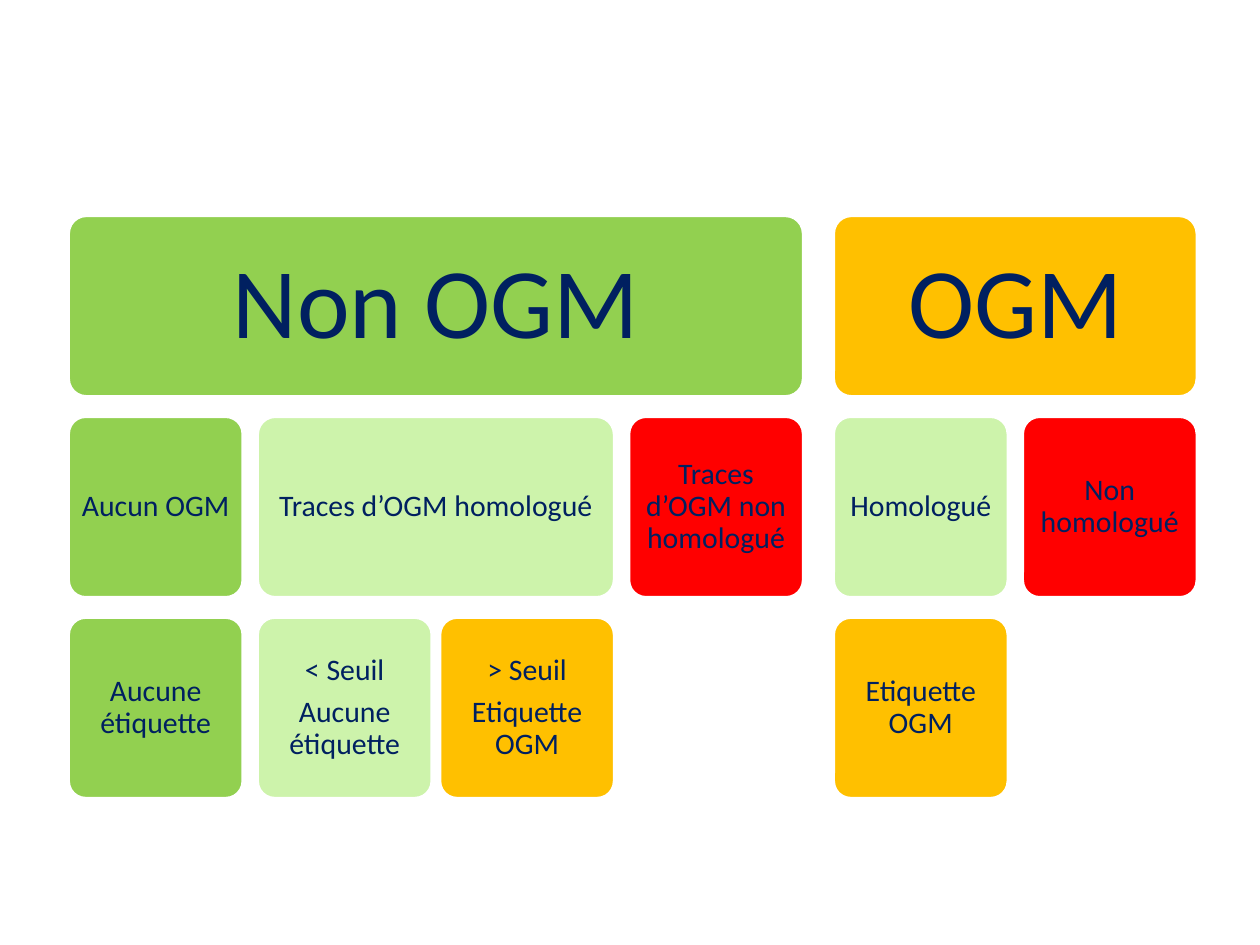
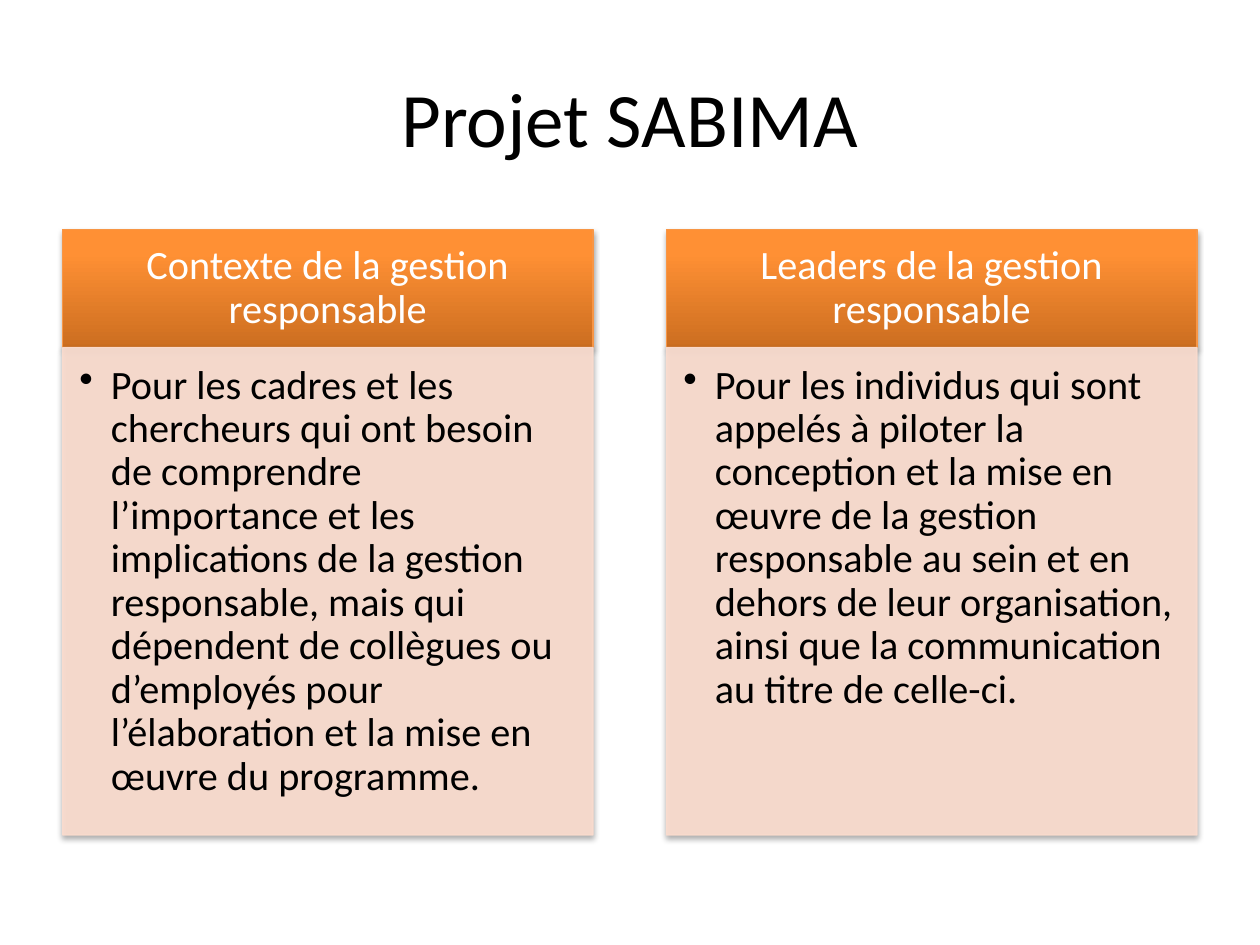
from collections import namedtuple
from dataclasses import dataclass

from lxml.etree import SubElement
from pptx import Presentation
from pptx.dml.color import RGBColor
from pptx.enum.shapes import MSO_SHAPE
from pptx.enum.text import MSO_ANCHOR, PP_ALIGN
from pptx.oxml.ns import qn
from pptx.util import Pt


@dataclass(frozen=True)
class Theme:
    font: str = "Calibri"
    white: str = "FFFFFF"
    black: str = "000000"
    navy: str = "002060"
    green: str = "92D050"
    pale_green: str = "CDF3AB"
    amber: str = "FFC000"
    red: str = "FF0000"
    orange: str = "F79646"
    peach: str = "FCDDCF"
    bar_stops: tuple = ((0, "CC6E20"), (80, "FF9034"), (100, "FF9136"))
    title_size: float = 44
    root_size: float = 57
    node_size: float = 17
    column_size: float = 23


T = Theme()
Box = namedtuple("Box", "x y w h")
Node = namedtuple("Node", "text color children", defaults=((),))

# Classification tree: leaf width, row height and the gap between siblings by depth
LEAF_W, ROW_H, ROW_STEP = 100, 103.7, 114.8
SIBLING_GAPS = (17, 8, 4.2)

CLASSES = (
    Node("Non OGM", T.green, (
        Node("Aucun OGM", T.green, (Node("Aucune étiquette", T.green),)),
        Node("Traces d’OGM homologué", T.pale_green, (
            Node("< Seuil\nAucune étiquette", T.pale_green),
            Node("> Seuil\nEtiquette OGM", T.amber),
        )),
        Node("Traces d’OGM non homologué", T.red),
    )),
    Node("OGM", T.amber, (
        Node("Homologué", T.pale_green, (Node("Etiquette OGM", T.amber),)),
        Node("Non homologué", T.red),
    )),
)

COLUMNS = (
    ("Contexte de la gestion responsable",
     "Pour les cadres et les chercheurs qui ont besoin de comprendre "
     "l’importance et les implications de la gestion responsable, mais qui "
     "dépendent de collègues ou d’employés pour l’élaboration et la mise en "
     "œuvre du programme."),
    ("Leaders de la gestion responsable",
     "Pour les individus qui sont appelés à piloter la conception et la mise "
     "en œuvre de la gestion responsable au sein et en dehors de leur "
     "organisation, ainsi que la communication au titre de celle-ci."),
)


def rgb(color):
    return RGBColor.from_string(color)


def write(sp, text, size, color, insets, anchor=MSO_ANCHOR.MIDDLE,
          align=PP_ALIGN.CENTER, spacing=0.9, after=0.35):
    """Fill a shape with text, one paragraph a line; after is a share of size."""
    tf = sp.text_frame
    tf.word_wrap = True
    tf.vertical_anchor = anchor
    tf.margin_left, tf.margin_top, tf.margin_right, tf.margin_bottom = map(Pt, insets)
    tf.text = text
    for p in tf.paragraphs:
        p.alignment = align
        p.line_spacing = spacing
        p.space_after = Pt(size * after)
        p.font.name = T.font
        p.font.size = Pt(size)
        p.font.color.rgb = rgb(color)
    return tf


def add_box(slide, kind, box, fill, line, line_width):
    sp = slide.shapes.add_shape(kind, *map(Pt, box))
    sp.shadow.inherit = False
    sp.fill.solid()
    sp.fill.fore_color.rgb = rgb(fill)
    sp.line.color.rgb = rgb(line)
    sp.line.width = Pt(line_width)
    return sp


def set_alpha(color_element, percent):
    SubElement(color_element, qn("a:alpha"), val=str(percent * 1000))


def add_shadow(sp):
    effects = sp._element.spPr.find(qn("a:effectLst"))
    shadow = SubElement(effects, qn("a:outerShdw"), blurRad=str(Pt(3.1)),
                        dist=str(Pt(1.8)), dir="5400000", rotWithShape="0")
    set_alpha(SubElement(shadow, qn("a:srgbClr"), val=T.black), 35)


def set_gradient(sp, stops):
    sp.fill.gradient()
    sp.fill.gradient_angle = 90
    stop_list = sp._element.spPr.find(qn("a:gradFill")).find(qn("a:gsLst"))
    for old in list(stop_list):
        stop_list.remove(old)
    for position, color in stops:
        stop = SubElement(stop_list, qn("a:gs"), pos=str(position * 1000))
        SubElement(stop, qn("a:srgbClr"), val=color)


def set_bullet(p, indent):
    pPr = p._p.get_or_add_pPr()
    pPr.set("marL", str(Pt(indent)))
    pPr.set("indent", str(-Pt(indent)))
    bullet = pPr.makeelement(qn("a:buChar"), {"char": "•"})
    pPr.find(qn("a:defRPr")).addprevious(bullet)


def node_width(node, depth):
    if not node.children:
        return LEAF_W
    gaps = SIBLING_GAPS[depth + 1] * (len(node.children) - 1)
    return gaps + sum(node_width(child, depth + 1) for child in node.children)


def add_tree(slide, nodes, x, y, depth=0):
    """Place a row of nodes, and below each one its children."""
    size, inset = (T.root_size, 14) if depth == 0 else (T.node_size, 2)
    for node in nodes:
        w = node_width(node, depth)
        sp = add_box(slide, MSO_SHAPE.ROUNDED_RECTANGLE, Box(x, y, w, ROW_H),
                     node.color, T.white, 2)
        sp.adjustments[0] = 0.1
        write(sp, node.text, size, T.navy, [inset] * 4)
        add_tree(slide, node.children, x, y + ROW_STEP, depth + 1)
        x += w + SIBLING_GAPS[depth]


def add_title(slide, box, text):
    sp = slide.shapes.add_textbox(*map(Pt, box))
    write(sp, text, T.title_size, T.black, (7.2, 3.6, 7.2, 3.6), spacing=1, after=0)


def add_column(slide, box, heading, body, bar_h=67.4):
    # Heading bar
    bar = add_box(slide, MSO_SHAPE.RECTANGLE, box._replace(h=bar_h),
                  T.orange, T.orange, 0.75)
    set_gradient(bar, T.bar_stops)
    add_shadow(bar)
    write(bar, heading, T.column_size, T.white, (13, 7.2, 13, 7.2))

    # Translucent panel with one bullet
    panel = add_box(slide, MSO_SHAPE.RECTANGLE,
                    box._replace(y=box.y + bar_h, h=box.h - bar_h),
                    T.peach, T.peach, 0.75)
    for color in panel._element.spPr.iter(qn("a:srgbClr")):
        set_alpha(color, 90)
    add_shadow(panel)
    tf = write(panel, body, T.column_size, T.black, (9.6, 9.6, 13, 14.4),
               MSO_ANCHOR.TOP, PP_ALIGN.LEFT, after=0.15)
    set_bullet(tf.paragraphs[0], 18)


def build_classes(slide):
    add_tree(slide, CLASSES, 39, 123.1)


def build_project(slide):
    add_title(slide, Box(36, 21.6, 648, 90), "Projet SABIMA")
    area, gap = Box(35.8, 131.2, 648.2, 346), 42
    w = (area.w - gap) / len(COLUMNS)
    for i, (heading, body) in enumerate(COLUMNS):
        box = area._replace(x=area.x + i * (w + gap), w=w)
        add_column(slide, box, heading, body)


def main():
    prs = Presentation()
    prs.slide_width, prs.slide_height = Pt(720), Pt(540)
    for build in (build_classes, build_project):
        build(prs.slides.add_slide(prs.slide_layouts[6]))
    prs.save("out.pptx")


if __name__ == "__main__":
    main()
